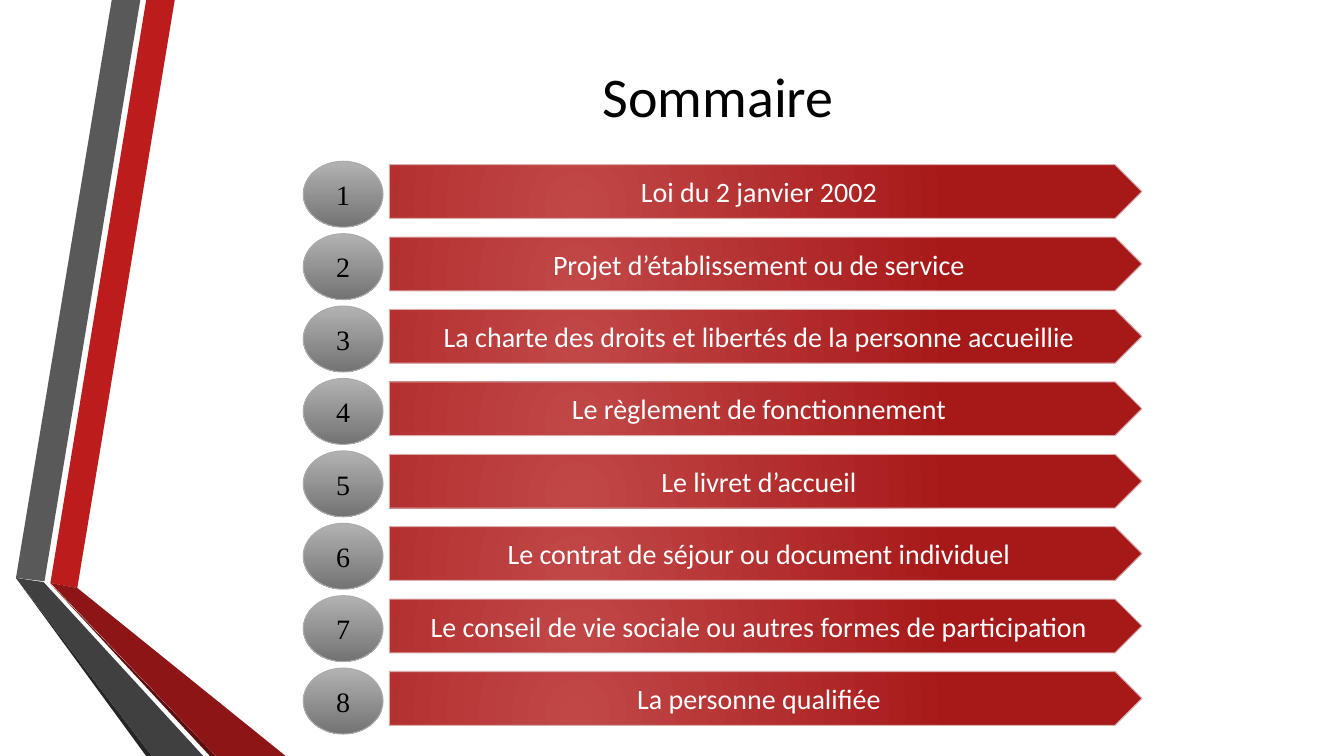
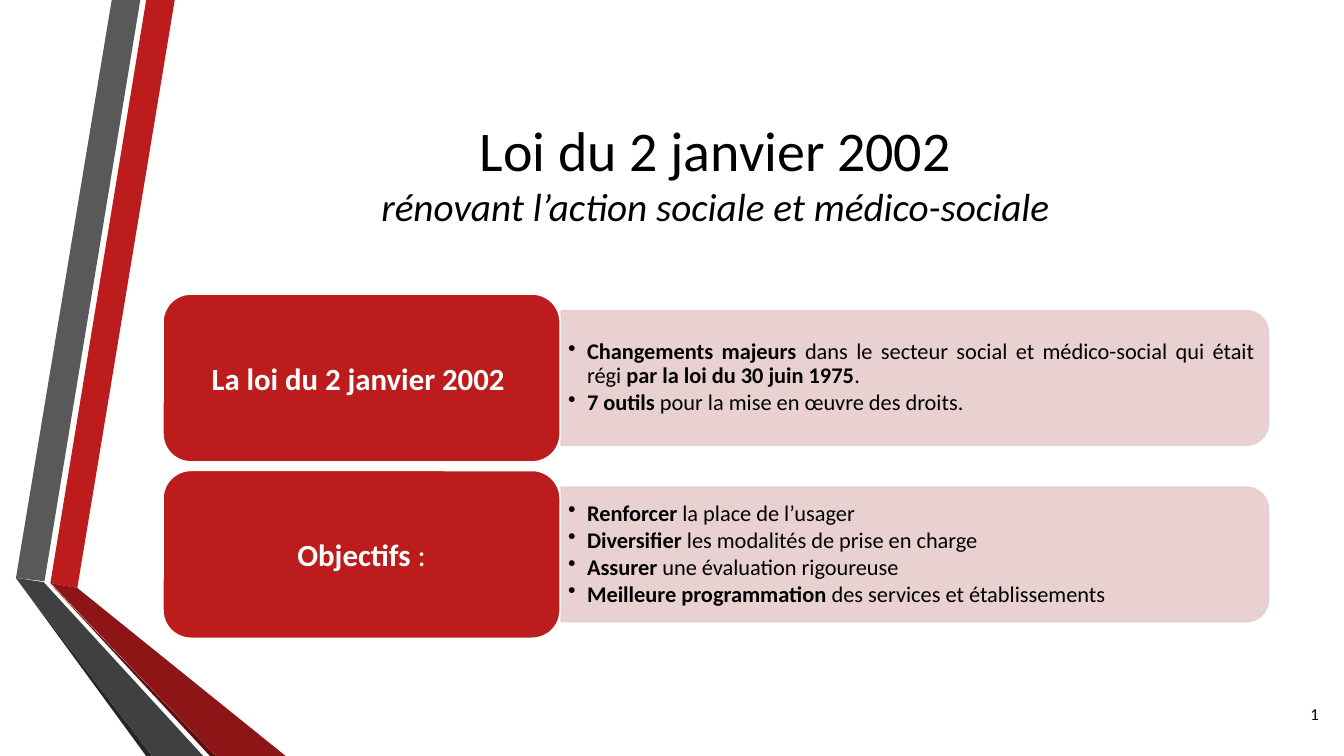
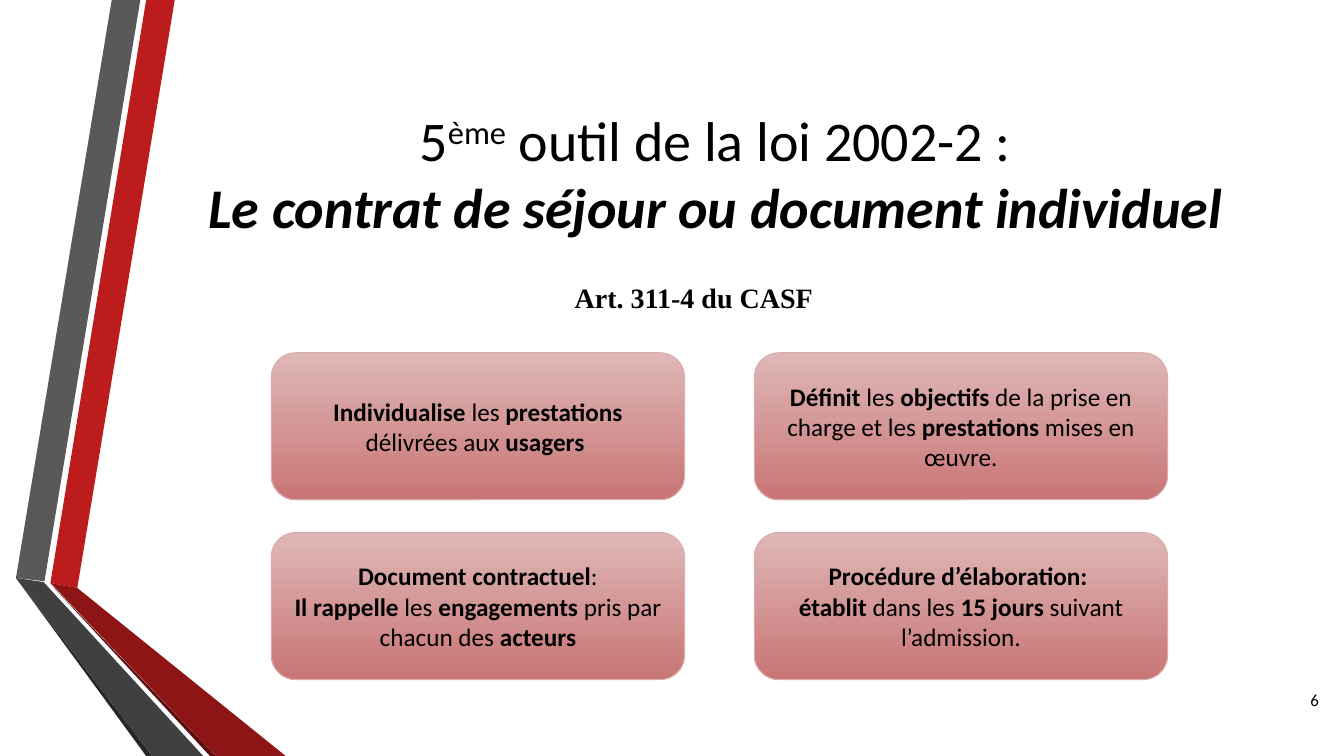
from dataclasses import dataclass

from pptx import Presentation
from pptx.dml.color import RGBColor
from pptx.enum.shapes import MSO_SHAPE
from pptx.enum.text import MSO_ANCHOR, MSO_AUTO_SIZE, PP_ALIGN
from pptx.oxml import parse_xml
from pptx.oxml.ns import nsdecls, qn
from pptx.util import Emu, Pt

PLATE, OVAL = MSO_SHAPE.PENTAGON, MSO_SHAPE.OVAL
ROUND, TAB = MSO_SHAPE.ROUNDED_RECTANGLE, MSO_SHAPE.ROUND_2_SAME_RECTANGLE
LEFT, MID, RIGHT, JUST = (PP_ALIGN.LEFT, PP_ALIGN.CENTER,
                          PP_ALIGN.RIGHT, PP_ALIGN.JUSTIFY)
TOP, CENTRE = MSO_ANCHOR.TOP, MSO_ANCHOR.MIDDLE

# The grid: 160 columns by 90 rows of square cells
COLS, ROWS, CELL = 160, 90, 76200
TITLE_ONLY = 5


@dataclass(frozen=True)
class Theme:
    sans: str = "Calibri"
    serif: str = "Times New Roman"
    black: str = "000000"
    white: str = "FFFFFF"
    red: str = "BC1C1C"
    pale: str = "E7CDCD"
    edge: str = "DAACAC"
    rim: str = "ABABAB"
    grey: str = "595959"
    coal: str = "404040"
    soot: str = "262626"
    wine: str = "8D1515"
    dusk: str = "5E0E0E"
    bar: tuple = ("C14747", "A71919")
    ball: tuple = ("B2B2B2", "737373")
    card: tuple = ("DFB7B7", "C97575")
    head: int = 40
    sub: int = 28
    label: int = 22
    item: int = 20
    body: int = 18
    point: int = 16
    folio: int = 12


@dataclass(frozen=True)
class Run:
    text: str
    bold: bool = False
    slant: bool = False
    size: int = 0
    lift: int = 0


def bold(text):
    return Run(text, bold=True)


THEME = Theme()
BREAK = "\n"

# Ribbon pieces, back to front: colour and corners in cells
RIBBON = [
    (THEME.red, [(6, 69.4), (9.2, 70), (20.8, 0), (17.4, 0)]),
    (THEME.grey, [(16.7, 0), (13.3, 0), (1.9, 68.8), (5.3, 69.2)]),
    (THEME.soot, [(1.9, 68.8), (17.4, 90), (18.1, 90)]),
    (THEME.dusk, [(6, 69.5), (25, 90), (25.7, 90)]),
    (THEME.wine, [(6, 69.4), (25.7, 90), (34, 90), (9.2, 70)]),
    (THEME.coal, [(24.2, 90), (5.2, 69.3), (1.9, 68.8), (18.1, 90)]),
]


def cells(*counts):
    return [Emu(round(n * CELL)) for n in counts]


class Deck:
    def __init__(self, theme):
        self.look = theme
        self.show = Presentation()
        self.show.slide_width, self.show.slide_height = cells(COLS, ROWS)
        self.base = self.show.slide_layouts[TITLE_ONLY]
        self.slide = None

    def start(self, box, *runs):
        """Start a slide and set its title."""
        first = self.slide is None
        self.slide = self.show.slides.add_slide(self.base)
        if first:
            self.ribbon()
        title = self.slide.shapes.title
        title.left, title.top, title.width, title.height = cells(*box)
        self.put(title, [runs], self.look.head)
        title.text_frame.auto_size = MSO_AUTO_SIZE.NONE

    def ribbon(self):
        """Draw the ribbon and hand it to the shared layout."""
        group = self.slide.shapes.add_group_shape()
        for color, points in RIBBON:
            spots = [cells(*point) for point in points]
            pen = group.shapes.build_freeform(*spots[0])
            pen.add_line_segments(spots[1:], close=True)
            self.paint(pen.convert_to_shape(), color)
        for num, tag in enumerate(group.element.iter(qn("p:cNvPr")), 20):
            tag.set("id", str(num))
        self.base.shapes.element.insert(2, group.element)

    def paint(self, shape, fill, line=None, width=0.75, radial=False):
        """Give a plain fill, or a gradient for a pair of colours."""
        shape.shadow.inherit = False
        if isinstance(fill, tuple):
            shape.fill.gradient()
            shape.fill.gradient_angle = 270
            for stop, color in zip(shape.fill.gradient_stops, fill):
                stop.color.rgb = RGBColor.from_string(color)
        else:
            shape.fill.solid()
            shape.fill.fore_color.rgb = RGBColor.from_string(fill)
        if radial:
            lin = next(shape.element.iter(qn("a:lin")))
            lin.getparent().replace(lin, parse_xml(
                f'<a:path {nsdecls("a")} path="circle"><a:fillToRect '
                'l="50000" t="100000" r="100000" b="50000"/></a:path>'))
        if line:
            shape.line.color.rgb = RGBColor.from_string(line)
            shape.line.width = Pt(width)
        else:
            shape.line.fill.background()

    def shape(self, kind, box, fill, line, **style):
        shape = self.slide.shapes.add_shape(kind, *cells(*box))
        self.paint(shape, fill, line, **style)
        return shape

    def put(self, shape, paras, size, color=None, font=None, align=MID,
            anchor=CENTRE):
        """Set paragraphs, each a list of runs or plain strings."""
        frame = shape.text_frame
        frame.word_wrap = True
        frame.vertical_anchor = anchor
        for num, runs in enumerate(paras):
            para = frame.add_paragraph() if num else frame.paragraphs[0]
            para.alignment = align
            for run in runs:
                if run == BREAK:
                    para.add_line_break()
                    continue
                if isinstance(run, str):
                    run = Run(run)
                piece = para.add_run()
                piece.text = run.text
                face = piece.font
                face.name = font or self.look.sans
                face.size = Pt(run.size or size)
                face.bold, face.italic = run.bold, run.slant
                face.color.rgb = RGBColor.from_string(
                    color or self.look.black)
                if run.lift:
                    piece._r.get_or_add_rPr().set(
                        "baseline", str(run.lift * 1000))
        return frame

    def text(self, box, paras, size, **style):
        area = self.slide.shapes.add_textbox(*cells(*box))
        return self.put(area, paras, size, **style)

    def points(self, box, paras, align):
        """Set a bulleted list."""
        frame = self.text(box, paras, self.look.point, align=align)
        frame.margin_left, frame.margin_right = cells(0.84, 0.84)
        frame.margin_top, frame.margin_bottom = cells(0.36, 0.36)
        for para in frame.paragraphs:
            para.line_spacing = 0.9
            para.space_after = Pt(2)
            props = para._p.get_or_add_pPr()
            props.set("marL", "171450")
            props.set("indent", "-171450")
            props.append(parse_xml(
                f'<a:buChar {nsdecls("a")} char="•"/>'))

    def entry(self, num, top, text):
        """Draw one numbered line of the summary."""
        look = self.look
        bar = self.shape(PLATE, (46.35, top + 0.4, 89.6, 6.4),
                         look.bar, look.edge, radial=True)
        self.put(bar, [[text]], look.item, look.white)
        ball = self.shape(OVAL, (36.1, top, 9.5, 7.85), look.ball, look.rim)
        self.put(ball, [[str(num)]], look.item, font=look.serif)

    def topic(self, top, name, paras, align):
        """Draw a red label with its list on a pale panel."""
        look = self.look
        left, wide, high = 66.8, 84.2, 16
        # The panel is an upright tab turned on its side
        panel = self.shape(TAB, (left + (wide - high) / 2,
                                 top + 2 + (high - wide) / 2, high, wide),
                           look.pale, look.pale, width=1.25)
        panel.rotation = 90
        for color in panel.element.spPr.iter(qn("a:srgbClr")):
            color.append(parse_xml(
                f'<a:alpha {nsdecls("a")} val="90000"/>'))
        self.points((left, top + 2.8, 83.4, 14.4), paras, align)
        label = self.shape(ROUND, (19.4, top, 47.3, 20),
                           look.red, look.white, width=1.25)
        self.put(label, [name], look.label, look.white)

    def card(self, col, row, paras):
        box = (32.3 + 57.5 * col, 42 + 21.4 * row, 49.2, 17.5)
        card = self.shape(ROUND, box, self.look.card, self.look.edge)
        self.put(card, paras, self.look.body)

    def folio(self, num, top):
        self.text((151, top, 7.2, 4.8), [[str(num)]], self.look.folio,
                  align=RIGHT)


SUMMARY = [
    "Loi du 2 janvier 2002",
    "Projet d’établissement ou de service",
    "La charte des droits et libertés de la personne accueillie",
    "Le règlement de fonctionnement",
    "Le livret d’accueil",
    "Le contrat de séjour ou document individuel",
    "Le conseil de vie sociale ou autres formes de participation",
    "La personne qualifiée",
]

TOPICS = [
    ([bold("La loi du 2 janvier 2002 ")], JUST, [
        [bold("Changements majeurs "),
         "dans le secteur social et médico-social qui était régi ",
         bold("par la loi du 30 juin 1975"), ". "],
        [bold("7 outils"), " pour la mise en œuvre des droits."],
    ]),
    ([bold("Objectifs"), " :"], LEFT, [
        [bold("Renforcer"), " la place de l’usager"],
        [bold("Diversifier"), " les modalités de prise en charge"],
        [bold("Assurer"), " une évaluation rigoureuse"],
        [bold("Meilleure programmation "), "des services et établissements"],
    ]),
]

CARDS = [
    [[bold("Individualise"), " les ", bold("prestations"),
      " délivrées aux ", bold("usagers ")]],
    [[bold("Définit"), " les ", bold("objectifs"),
      " de la prise en charge et les ", bold("prestations"),
      " mises en œuvre."]],
    [[bold("Document contractuel"), ":"],
     [bold("Il rappelle "), "les ", bold("engagements"),
      " pris par chacun des ", bold("acteurs")]],
    [[bold("Procédure d’élaboration: ")],
     [bold("établit "), "dans les ", bold("15 jours "),
      "suivant l’admission."]],
]


def main():
    deck = Deck(THEME)
    tall = (19.4, 9, 131.5, 23)

    # Summary
    deck.start((19.4, 4.8, 132.2, 13), "Sommaire")
    for num, text in enumerate(SUMMARY):
        deck.entry(num + 1, 19.2 + 8.62 * num, text)

    # The law and its aims
    deck.start(tall, "Loi du 2 janvier 2002", BREAK,
               Run("rénovant l’action sociale et médico-sociale",
                   slant=True, size=THEME.sub))
    for num, (name, align, paras) in enumerate(TOPICS):
        deck.topic(35 + 21 * num, name, paras, align)
    deck.folio(1, 82.6)

    # The contract
    deck.start(tall, "5", Run("ème", lift=30), " outil de la loi 2002-2 :",
               BREAK, Run("Le contrat de séjour ou document individuel",
                          bold=True, slant=True))
    deck.text((49.4, 32.8, 66.4, 5.3), [[bold("Art. 311-4 du CASF")]],
              THEME.item, font=THEME.serif, anchor=TOP)
    for num, paras in enumerate(CARDS):
        deck.card(num % 2, num // 2, paras)
    deck.folio(6, 80.9)

    deck.show.save("out.pptx")


if __name__ == "__main__":
    main()
